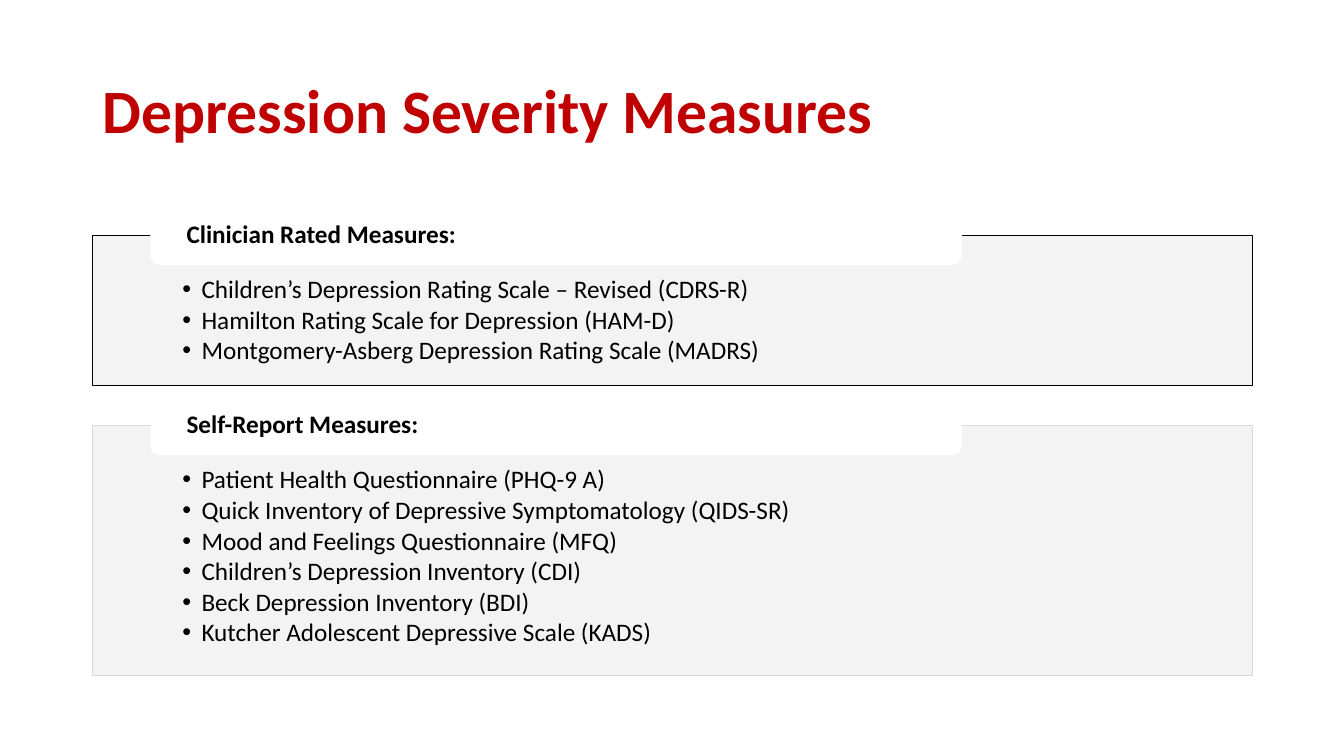
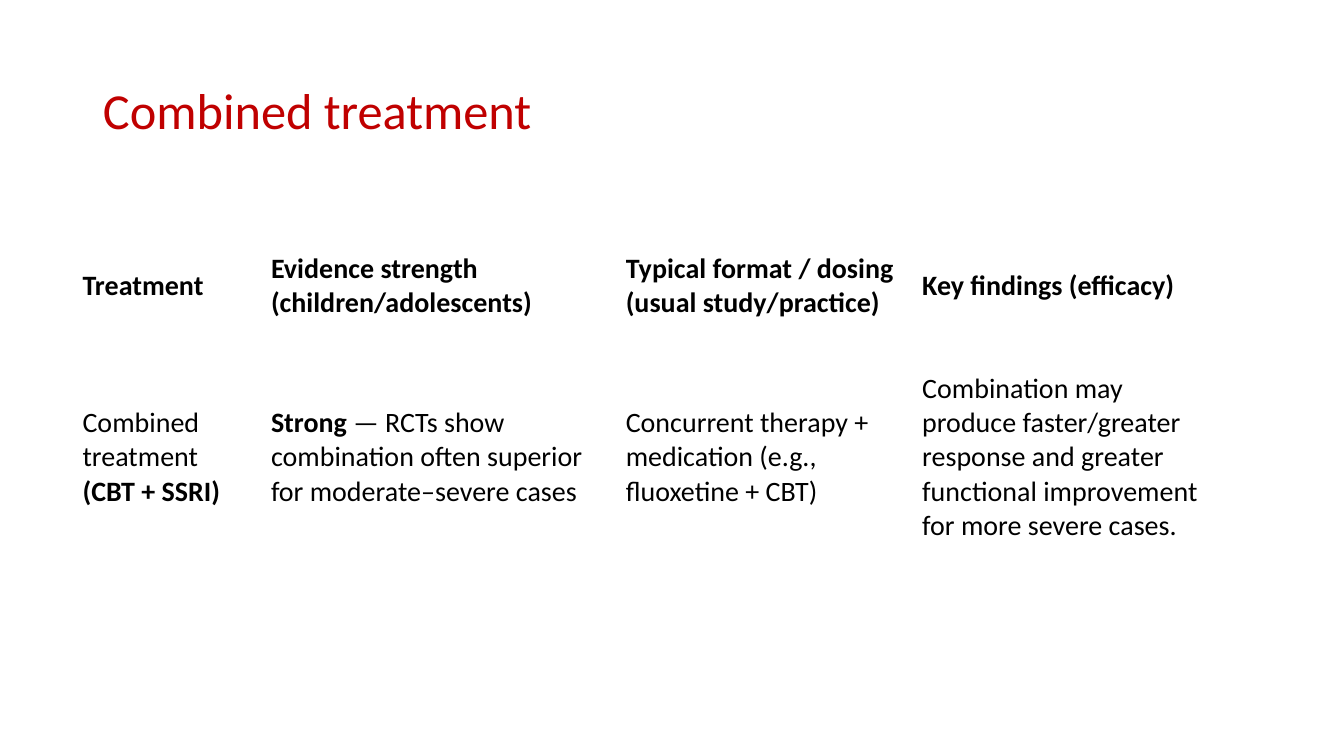
from dataclasses import dataclass

from lxml import etree
from pptx import Presentation
from pptx.dml.color import RGBColor
from pptx.enum import shapes, text
from pptx.oxml import ns
from pptx.util import Cm, Pt


@dataclass(frozen=True)
class Theme:
    font: str = "Calibri"
    title: str = "C00000"
    ink: str = "000000"
    panel: str = "F2F2F2"
    edge: str = "D9D9D9"
    tab: str = "FFFFFF"
    list_size: int = 18
    table_size: int = 20


T = Theme()

MEASURES_TITLE = "Depression Severity Measures"
MEASURES = [
    ("Clinician Rated Measures:", T.ink, [
        "Children’s Depression Rating Scale – Revised (CDRS-R)",
        "Hamilton Rating Scale for Depression (HAM-D)",
        "Montgomery-Asberg Depression Rating Scale (MADRS)",
    ]),
    ("Self-Report Measures:", T.edge, [
        "Patient Health Questionnaire (PHQ-9 A)",
        "Quick Inventory of Depressive Symptomatology (QIDS-SR)",
        "Mood and Feelings Questionnaire (MFQ)",
        "Children’s Depression Inventory (CDI)",
        "Beck Depression Inventory (BDI)",
        "Kutcher Adolescent Depressive Scale (KADS)",
    ]),
]

TREATMENT_TITLE = "Combined treatment"
TREATMENT_ROWS = [
    [
        [("Treatment", True)],
        [("Evidence strength (children/adolescents)", True)],
        [("Typical format / dosing (usual study/practice)", True)],
        [("Key findings (efficacy)", True)],
    ],
    [
        [("Combined treatment ", False), ("(CBT + SSRI)", True)],
        [("Strong ", True),
         ("— RCTs show combination often superior for moderate–severe cases", False)],
        [("Concurrent therapy + medication (e.g., fluoxetine + CBT)", False)],
        [("Combination may produce faster/greater response and greater "
          "functional improvement for more severe cases.", False)],
    ],
]
COLUMN_WIDTHS = [4.75, 8.94, 7.47, 8.08]
ROW_HEIGHTS = [2.0, 6.65]

LEFT, WIDTH = 2.34, 29.21
PANEL_TOP, PANEL_GAP, PANEL_PAD, LINE_PITCH = 5.94, 1.01, 1.26, 0.84
TAB_LEFT, TAB_WIDTH, TAB_HEIGHT = 3.79, 20.45, 1.48


def write(p, words, size, color=T.ink, bold=False, spacing=0.9, after=0):
    p.alignment = text.PP_ALIGN.LEFT
    p.line_spacing = spacing
    p.space_after = Pt(after)
    r = p.add_run()
    r.text = words
    r.font.name = T.font
    r.font.size = Pt(size)
    r.font.bold = bold
    r.font.color.rgb = RGBColor.from_string(color)


def set_bullet(p):
    pr = p._p.get_or_add_pPr()
    pr.set("marL", str(Cm(0.48)))
    pr.set("indent", str(-Cm(0.48)))
    etree.SubElement(pr, ns.qn("a:buFont"), typeface="Arial")
    etree.SubElement(pr, ns.qn("a:buChar"), char="•")


def add_slide(prs, title, size, bold=False):
    s = prs.slides.add_slide(prs.slide_layouts[5])
    sp = s.shapes.title
    sp.left, sp.top, sp.width, sp.height = Cm(LEFT), Cm(1.02), Cm(WIDTH), Cm(3.68)
    tf = sp.text_frame
    tf.auto_size = text.MSO_AUTO_SIZE.NONE
    tf.vertical_anchor = text.MSO_ANCHOR.MIDDLE
    write(tf.paragraphs[0], title, size, T.title, bold)
    return s


def add_box(s, kind, box, fill, edge=None, insets=(0, 0, 0, 0),
            anchor=text.MSO_ANCHOR.MIDDLE):
    sp = s.shapes.add_shape(kind, *map(Cm, box))
    sp.shadow.inherit = False
    sp.fill.solid()
    sp.fill.fore_color.rgb = RGBColor.from_string(fill)
    if edge:
        sp.line.color.rgb = RGBColor.from_string(edge)
        sp.line.width = Pt(0.5)
    else:
        sp.line.fill.background()
    tf = sp.text_frame
    tf.word_wrap = True
    tf.vertical_anchor = anchor
    tf.margin_left, tf.margin_top, tf.margin_right, tf.margin_bottom = map(Cm, insets)
    return sp


def add_panel(s, top, heading, edge, items):
    height = PANEL_PAD + LINE_PITCH * len(items)
    panel = add_box(s, shapes.MSO_SHAPE.RECTANGLE, (LEFT, top, WIDTH, height), T.panel,
                    edge, (2.26, 1.04, 2.26, 0.36), text.MSO_ANCHOR.TOP)
    color = panel.fill._xPr.find(".//" + ns.qn("a:srgbClr"))
    etree.SubElement(color, ns.qn("a:alpha"), val="90000")
    tf = panel.text_frame
    for i, item in enumerate(items):
        p = tf.add_paragraph() if i else tf.paragraphs[0]
        write(p, item, T.list_size, after=2.4)
        set_bullet(p)
    tab = add_box(s, shapes.MSO_SHAPE.ROUNDED_RECTANGLE,
                  (TAB_LEFT, top - TAB_HEIGHT / 2, TAB_WIDTH, TAB_HEIGHT),
                  T.tab, insets=(0.84, 0, 0.84, 0))
    write(tab.text_frame.paragraphs[0], heading, T.list_size, bold=True)
    return top + height + PANEL_GAP


def add_treatment_table(s):
    table = s.shapes.add_table(
        len(ROW_HEIGHTS), len(COLUMN_WIDTHS), Cm(1.83), Cm(6.2),
        Cm(sum(COLUMN_WIDTHS)), Cm(sum(ROW_HEIGHTS))).table
    table.first_row = table.horz_banding = False
    for column, width in zip(table.columns, COLUMN_WIDTHS):
        column.width = Cm(width)
    for row, height, contents in zip(table.rows, ROW_HEIGHTS, TREATMENT_ROWS):
        row.height = Cm(height)
        for cell, runs in zip(row.cells, contents):
            cell.fill.background()
            cell.vertical_anchor = text.MSO_ANCHOR.MIDDLE
            cell.margin_left = cell.margin_right = Cm(0.25)
            cell.margin_top = cell.margin_bottom = 0
            for words, bold in runs:
                write(cell.text_frame.paragraphs[0], words, T.table_size,
                      bold=bold, spacing=1.0, after=8)


def main():
    prs = Presentation()
    prs.slide_width, prs.slide_height = Cm(33.87), Cm(19.05)
    s = add_slide(prs, MEASURES_TITLE, 44, bold=True)
    top = PANEL_TOP
    for heading, edge, items in MEASURES:
        top = add_panel(s, top, heading, edge, items)
    add_treatment_table(add_slide(prs, TREATMENT_TITLE, 36))
    prs.save("out.pptx")


if __name__ == "__main__":
    main()
